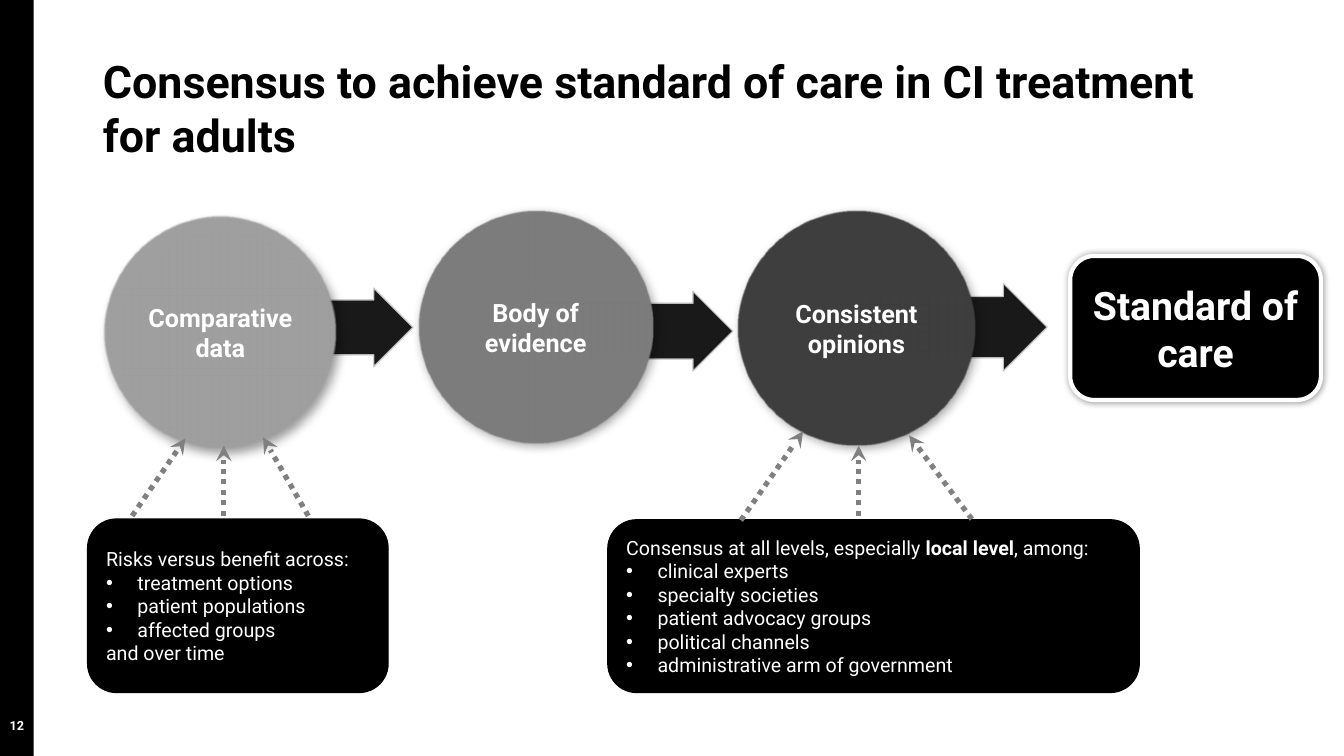
import pptx
import pptx.util
import pptx.dml.color
import pptx.enum.dml
import pptx.enum.shapes
import pptx.enum.text
import pptx.oxml
import pptx.oxml.ns

Cm, Pt = pptx.util.Cm, pptx.util.Pt
RGBColor = pptx.dml.color.RGBColor
SHAPE = pptx.enum.shapes.MSO_SHAPE
ALIGN = pptx.enum.text.PP_ALIGN
ANCHOR = pptx.enum.text.MSO_ANCHOR
NS = pptx.oxml.ns.nsdecls("a")

BLACK = RGBColor(0x00, 0x00, 0x00)
WHITE = RGBColor(0xFF, 0xFF, 0xFF)
LIGHT = RGBColor(0x9F, 0x9F, 0x9F)
MIDDLE = RGBColor(0x7C, 0x7C, 0x7C)
DARK = RGBColor(0x3E, 0x3E, 0x3E)
DOTS = RGBColor(0x80, 0x80, 0x80)
EDGE = RGBColor(0xCC, 0xCC, 0xCC)


def add_box(kind, box, fill, line=None, width=1, shadow=None, soft=False):
    """Add a preset shape; shadow is (blur pt, distance pt, angle)."""
    sp = s.shapes.add_shape(kind, *map(Cm, box))
    sp.shadow.inherit = False
    sp.fill.solid()
    sp.fill.fore_color.rgb = fill
    if line is None:
        sp.line.fill.background()
    else:
        sp.line.color.rgb = line
        sp.line.width = Pt(width)
    if shadow:
        blur, dist, angle = shadow
        effects = sp._element.spPr.find(pptx.oxml.ns.qn("a:effectLst"))
        effects.append(pptx.oxml.parse_xml(
            f'<a:outerShdw {NS} blurRad="{Pt(blur)}" dist="{Pt(dist)}" '
            f'dir="{angle * 60000}" algn="ctr" rotWithShape="0">'
            '<a:srgbClr val="000000"><a:alpha val="40000"/></a:srgbClr></a:outerShdw>'))
        if soft:
            effects.append(pptx.oxml.parse_xml(f'<a:softEdge {NS} rad="{Pt(1)}"/>'))
    return sp


def write(sp, text, size=14, color=WHITE, bold=False, align=ALIGN.LEFT,
          anchor=ANCHOR.MIDDLE, insets=(0.25, 0.13, 0.25, 0.13)):
    """Fill a shape; a leading • makes a bullet, and * encloses bold words."""
    tf = sp.text_frame
    tf.word_wrap = True
    tf.auto_size = pptx.enum.text.MSO_AUTO_SIZE.NONE
    tf.vertical_anchor = anchor
    tf.margin_left, tf.margin_top, tf.margin_right, tf.margin_bottom = map(Cm, insets)
    for i, line in enumerate(text.split("\n")):
        p = tf.paragraphs[0] if i == 0 else tf.add_paragraph()
        p.alignment = align
        if line.startswith("•"):
            pPr = p._p.get_or_add_pPr()
            pPr.set("marL", str(Cm(0.79)))
            pPr.set("indent", str(-Cm(0.79)))
            pPr.append(pptx.oxml.parse_xml(f'<a:buFont {NS} typeface="Arial"/>'))
            pPr.append(pptx.oxml.parse_xml(f'<a:buChar {NS} char="•"/>'))
        for j, part in enumerate(line.lstrip("•").split("*")):
            r = p.add_run()
            r.text = part
            r.font.name = "Roboto"
            r.font.size = Pt(size)
            r.font.bold = bold or j % 2 == 1
            r.font.color.rgb = color


prs = pptx.Presentation()
prs.slide_width, prs.slide_height = Cm(33.87), Cm(19.05)
s = prs.slides.add_slide(prs.slide_layouts[5])

# Side bar and title
add_box(SHAPE.RECTANGLE, (0, 0, 0.85, 19.05), BLACK)
title = s.shapes.title
title.left, title.top, title.width, title.height = map(Cm, (2.34, 1.37, 28.07, 2.67))
write(title, "Consensus to achieve standard of care in CI treatment for adults",
      size=32, color=BLACK, bold=True, insets=(0.25, 0, 0.25, 0))

# Explanation boxes
notes = [
    ((2.21, 13.08, 7.57, 4.37),
     "Risks versus benefit across:\n•treatment options\n•patient populations\n"
     "•affected groups\nand over time"),
    ((15.32, 13.1, 13.39, 4.35),
     "Consensus at all levels, especially *local level*, among:\n•clinical experts\n"
     "•specialty societies\n•patient advocacy groups\n•political channels\n"
     "•administrative arm of government"),
]
for box, text in notes:
    write(add_box(SHAPE.ROUNDED_RECTANGLE, box, BLACK, line=BLACK), text)

# Stages: arrow behind, circle, label
stages = [
    ("Comparative data", LIGHT, (2.62, 5.44, 5.87, 5.87), (5.61, 7.26, 4.8, 1.98), (8, 5, 60)),
    ("Body of evidence", MIDDLE, (10.54, 5.31, 5.92, 5.87), (13.67, 7.34, 4.8, 2.01), (8, 3, 45)),
    ("Consistent opinions", DARK, (18.59, 5.31, 5.99, 5.92), (21.59, 7.14, 4.8, 2.21), (8, 3, 45)),
]
INSET = 0.86
for text, color, circle, arrow, shadow in stages:
    sp = add_box(SHAPE.RIGHT_ARROW, arrow, BLACK, line=EDGE)
    sp.adjustments[0], sp.adjustments[1] = 0.7, 0.5
    for clr in sp._element.spPr.iter(pptx.oxml.ns.qn("a:srgbClr")):
        clr.append(pptx.oxml.parse_xml(f'<a:alpha {NS} val="90000"/>'))
    add_box(SHAPE.OVAL, circle, color, shadow=shadow, soft=True)
    x, y, w, h = circle
    label = s.shapes.add_textbox(Cm(x + INSET), Cm(y + INSET),
                                 Cm(w - 2 * INSET), Cm(h - 2 * INSET))
    write(label, text, size=18, bold=True, align=ALIGN.CENTER, insets=(0.03,) * 4)

# Outcome
outcome = add_box(SHAPE.ROUNDED_RECTANGLE, (26.97, 6.45, 6.32, 3.63), BLACK,
                  line=WHITE, width=3, shadow=(5, 0, 0))
write(outcome, "Standard of care", size=28, bold=True, align=ALIGN.CENTER)

# Dotted arrows from the boxes up to the circles
dotted = [
    (5.64, 13, 5.64, 11.23), (21.64, 13, 21.64, 11.23),
    (7.77, 13, 6.63, 11.02), (3.33, 13, 4.67, 11.05),
    (18.67, 13.11, 20.24, 10.87), (24.49, 13.08, 22.91, 10.97),
]
for ends in dotted:
    c = s.shapes.add_connector(pptx.enum.shapes.MSO_CONNECTOR.STRAIGHT, *map(Cm, ends))
    c.line.color.rgb = DOTS
    c.line.width = Pt(3.75)
    c.line.dash_style = pptx.enum.dml.MSO_LINE.ROUND_DOT
    c.line._get_or_add_ln().append(pptx.oxml.parse_xml(f'<a:tailEnd {NS} type="stealth"/>'))
    c._element.spPr.append(pptx.oxml.parse_xml(f"<a:effectLst {NS}/>"))

# Slide number
number = s.shapes.add_textbox(Cm(-0.03), Cm(17.45), Cm(0.91), Cm(1.02))
write(number, "12", size=9, bold=True, align=ALIGN.CENTER, anchor=ANCHOR.BOTTOM,
      insets=(0.25, 0.13, 0.25, 0))
number.text_frame.word_wrap = False

prs.save("out.pptx")
